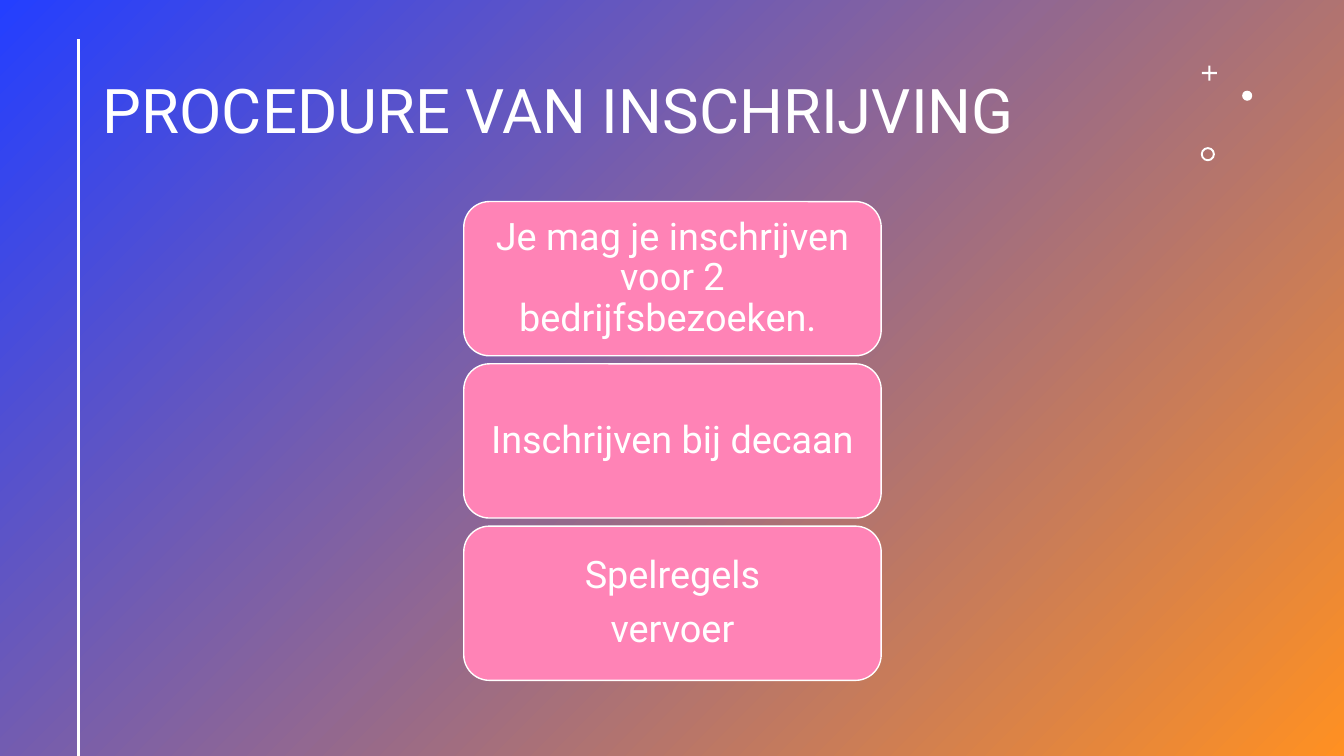
from lxml.etree import SubElement
from pptx import Presentation
from pptx.dml.color import RGBColor
from pptx.enum.shapes import MSO_CONNECTOR, MSO_SHAPE
from pptx.enum.text import MSO_ANCHOR, MSO_AUTO_SIZE, PP_ALIGN
from pptx.oxml.ns import qn
from pptx.util import Inches, Pt

TITLE = "PROCEDURE VAN INSCHRIJVING"
STEPS = [
    ["Je mag je inschrijven voor 2 bedrijfsbezoeken. "],
    ["Inschrijven bij decaan"],
    ["Spelregels", "vervoer"],
]
ORNAMENTS = [
    (MSO_SHAPE.CROSS, 11.92, 0.65, 0.15, 0.43),
    (MSO_SHAPE.OVAL, 12.32, 0.9, 0.1, None),
    (MSO_SHAPE.DONUT, 11.91, 1.46, 0.14, 0.14),
]
COLORS = {"blue": "243FFF", "orange": "FF9022", "pink": "FF83B6", "white": "FFFFFF"}
FONT = "Roboto"
WIDTH, HEIGHT = 13.33, 7.5
TITLE_BOX = (0.92, 0.4, 10.72, 1.45)
RULE_X, RULE_TOP = 0.78, 0.39
CARD_LEFT, CARD_TOP, CARD_WIDTH, CARD_HEIGHT, CARD_GAP = 4.6, 2, 4.14, 1.53, 0.08
CARD_FRAME = {
    "word_wrap": True,
    "vertical_anchor": MSO_ANCHOR.MIDDLE,
    "margin_left": Inches(0.11),
    "margin_right": Inches(0.11),
    "margin_top": Inches(0.06),
    "margin_bottom": Inches(0.06),
}
TITLE_FRAME = {
    "word_wrap": True,
    "auto_size": MSO_AUTO_SIZE.NONE,
    "vertical_anchor": MSO_ANCHOR.MIDDLE,
}
CARD_PARA = {"alignment": PP_ALIGN.CENTER, "line_spacing": 0.9, "space_after": Pt(9.5)}
TITLE_PARA = {"alignment": PP_ALIGN.LEFT, "line_spacing": 0.9}


def color(name):
    return RGBColor.from_string(COLORS[name])


def apply(target, values):
    for name, value in values.items():
        setattr(target, name, value)


def write(frame, lines, size, frame_format, para_format):
    apply(frame, frame_format)
    for index, line in enumerate(lines):
        para = frame.add_paragraph() if index else frame.paragraphs[0]
        apply(para, para_format)
        span = para.add_run()
        span.text = line
        apply(span.font, {"name": FONT, "size": Pt(size)})
        span.font.color.rgb = color("white")


def add_box(page, kind, left, top, width, height, fill=None):
    box = page.shapes.add_shape(kind, *map(Inches, (left, top, width, height)))
    box.shadow.inherit = False
    box.line.fill.background()
    if fill:
        box.fill.solid()
        box.fill.fore_color.rgb = color(fill)
    return box


def add_backdrop(page):
    backdrop = add_box(page, MSO_SHAPE.RECTANGLE, 0, 0, WIDTH, HEIGHT)
    backdrop.fill.gradient()
    backdrop.fill.gradient_angle = 315
    for stop, name, position in zip(backdrop.fill.gradient_stops, ("blue", "orange"), (0, 1)):
        stop.color.rgb = color(name)
        stop.position = position
    page.shapes.title.element.addprevious(backdrop.element)


def add_title(page):
    title = page.shapes.title
    apply(title, dict(zip(("left", "top", "width", "height"), map(Inches, TITLE_BOX))))
    write(title.text_frame, [TITLE], 44, TITLE_FRAME, TITLE_PARA)


def add_rule(page):
    ends = map(Inches, (RULE_X, RULE_TOP, RULE_X, HEIGHT))
    rule = page.shapes.add_connector(MSO_CONNECTOR.STRAIGHT, *ends)
    rule.line.color.rgb = color("white")
    rule.line.width = Pt(2)
    SubElement(rule.element.spPr, qn("a:effectLst"))


def add_ornaments(page):
    for kind, left, top, size, adjustment in ORNAMENTS:
        ornament = add_box(page, kind, left, top, size, size, "white")
        if adjustment:
            ornament.adjustments[0] = adjustment


def add_cards(page):
    for index, lines in enumerate(STEPS):
        top = CARD_TOP + index * (CARD_HEIGHT + CARD_GAP)
        card = add_box(page, MSO_SHAPE.ROUNDED_RECTANGLE, CARD_LEFT, top, CARD_WIDTH, CARD_HEIGHT, "pink")
        card.line.color.rgb = color("white")
        card.line.width = Pt(1)
        write(card.text_frame, lines, 27, CARD_FRAME, CARD_PARA)


def main():
    deck = Presentation()
    deck.slide_width, deck.slide_height = Inches(WIDTH), Inches(HEIGHT)
    page = deck.slides.add_slide(deck.slide_layouts[5])
    for add_part in (add_backdrop, add_title, add_rule, add_ornaments, add_cards):
        add_part(page)
    deck.save("out.pptx")


if __name__ == "__main__":
    main()
